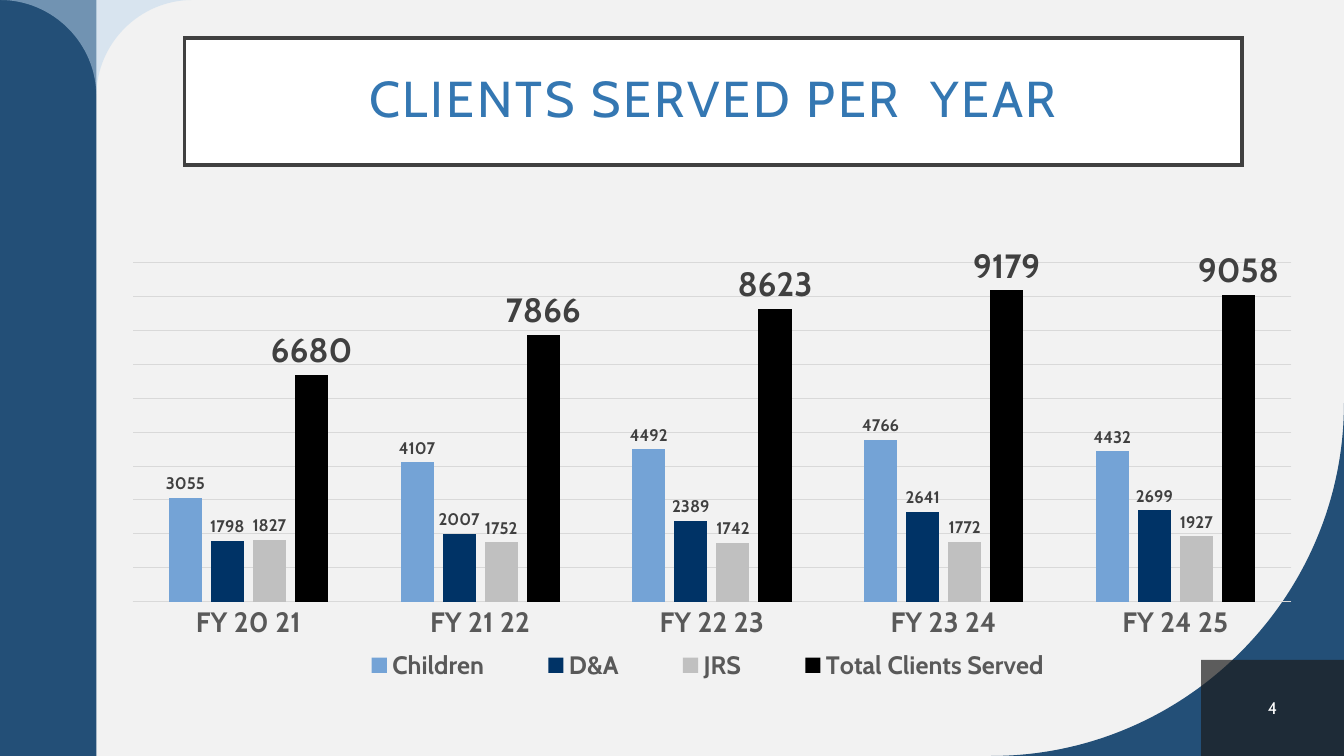
import dataclasses

import lxml.etree
import pptx
import pptx.chart.data
import pptx.dml.color
import pptx.enum.chart
import pptx.enum.shapes
import pptx.enum.text
import pptx.oxml.ns
import pptx.util


@dataclasses.dataclass(frozen=True)
class Theme:
    font: str = "Cabin"
    background: str = "F2F2F2"
    navy: str = "234F77"
    pale_blue: str = "C0D8ED"
    white: str = "FFFFFF"
    frame: str = "404040"
    title: str = "3477B2"
    badge: str = "1D1D1D"
    axis_text: str = "595959"
    grid_line: str = "D9D9D9"
    title_size: int = 36
    total_size: int = 24
    category_size: int = 20
    legend_size: int = 18
    small_size: int = 12


theme = Theme()
qn = pptx.oxml.ns.qn


def paint(shape, color, opacity=100):
    """Give a shape a flat fill, without outline or shadow."""
    shape.shadow.inherit = False
    shape.line.fill.background()
    shape.fill.solid()
    shape.fill.fore_color.rgb = pptx.dml.color.RGBColor.from_string(color)
    if opacity < 100:
        color_node = shape._element.spPr.find(qn("a:solidFill"))[0]
        lxml.etree.SubElement(color_node, qn("a:alpha")).set("val", str(opacity * 1000))


def set_font(font, size, color, bold=False):
    font.name = theme.font
    font.size = pptx.util.Pt(size)
    font.bold = bold
    font.color.rgb = pptx.dml.color.RGBColor.from_string(color)


deck = pptx.Presentation()
deck.slide_width = pptx.util.Emu(12192000)
deck.slide_height = pptx.util.Emu(6858000)
width, height = deck.slide_width, deck.slide_height
page = deck.slides.add_slide(deck.slide_layouts[5])
page.background.fill.solid()
page.background.fill.fore_color.rgb = pptx.dml.color.RGBColor.from_string(theme.background)

# Frames as percentages of the slide: left, top, width, height
shares = {
    "sidebar": (0, 0, 7.17, 100),
    "title": (13.73, 5, 78.7, 16.8),
    "badge": (89.37, 87.27, 10.63, 12.73),
    "chart": (7.8, 25, 89.72, 66.67),
}
frames = {
    name: [pptx.util.Emu(round(share * side / 100))
           for share, side in zip(frame, (width, height, width, height))]
    for name, frame in shares.items()
}

sidebar = page.shapes.add_shape(pptx.enum.shapes.MSO_SHAPE.RECTANGLE, *frames["sidebar"])
paint(sidebar, theme.navy)

# Quarter circles: each has a start, two control points and an end
big = height * 7 / 15
small = frames["sidebar"][2]
bend = 0.55
curves = [
    (theme.navy, 100, 1,
     [(width - big, height), (width - big + bend * big, height),
      (width, height - big + bend * big), (width, height - big), (width, height)]),
    (theme.pale_blue, 50, 2,
     [(2 * small, 0), (2 * small - bend * small, 0), (small, small - bend * small),
      (small, small), (small, small - bend * small), (bend * small, 0), (0, 0)]),
]
for color, opacity, arc_count, points in curves:
    points = [(round(x), round(y)) for x, y in points]
    outline = page.shapes.build_freeform(*points[0])
    outline.add_line_segments(points[1:], close=True)
    curve = outline.convert_to_shape()
    paint(curve, color, opacity)
    segments = list(curve._element.iter(qn("a:lnTo")))
    for first in range(0, 3 * arc_count, 3):
        bezier = lxml.etree.Element(qn("a:cubicBezTo"))
        segments[first].addprevious(bezier)
        for segment in segments[first:first + 3]:
            bezier.append(segment[0])
            segment.getparent().remove(segment)

# Title
title = page.shapes.title
page.shapes._spTree.append(title._element)
title.left, title.top, title.width, title.height = frames["title"]
title.fill.solid()
title.fill.fore_color.rgb = pptx.dml.color.RGBColor.from_string(theme.white)
title.line.color.rgb = pptx.dml.color.RGBColor.from_string(theme.frame)
title.line.width = pptx.util.Pt(2.5)
title_line = title._element.spPr.find(qn("a:ln"))
lxml.etree.SubElement(title_line, qn("a:miter")).set("lim", "800000")

# Page number
badge = page.shapes.add_shape(pptx.enum.shapes.MSO_SHAPE.RECTANGLE, *frames["badge"])
paint(badge, theme.badge, 70)

for box, text, size, color in (
    (title, "CLIENTS SERVED PER  YEAR", theme.title_size, theme.title),
    (badge, "4", theme.small_size, theme.white),
):
    box.text_frame.word_wrap = True
    box.text_frame.auto_size = pptx.enum.text.MSO_AUTO_SIZE.NONE
    box.text_frame.vertical_anchor = pptx.enum.text.MSO_ANCHOR.MIDDLE
    para = box.text_frame.paragraphs[0]
    para.alignment = pptx.enum.text.PP_ALIGN.CENTER
    span = para.add_run()
    span.text = text
    set_font(span.font, size, color)

title_para = title.text_frame.paragraphs[0]
title_para.line_spacing = 0.9
title_para.runs[0].font._element.set("spc", "200")
for side in ("left", "top", "right", "bottom"):
    setattr(title.text_frame, f"margin_{side}", pptx.util.Inches(0.2))

# Chart
series_rows = [
    ("Children", (3055, 4107, 4492, 4766, 4432), "74A3D6", theme.small_size),
    ("D&A", (1798, 2007, 2389, 2641, 2699), "003366", theme.small_size),
    ("JRS", (1827, 1752, 1742, 1772, 1927), "C0C0C0", theme.small_size),
    ("Total Clients Served", (6680, 7866, 8623, 9179, 9058), "000000", theme.total_size),
]
data = pptx.chart.data.CategoryChartData()
data.categories = [f"FY {year} {year + 1}" for year in range(20, 25)]
for name, values, color, label_size in series_rows:
    data.add_series(name, values)
chart = page.shapes.add_chart(
    pptx.enum.chart.XL_CHART_TYPE.COLUMN_CLUSTERED, *frames["chart"], data).chart
set_font(chart.font, 10, "000000")
chart.has_title = False
chart.has_legend = True
chart.legend.position = pptx.enum.chart.XL_LEGEND_POSITION.BOTTOM
chart.legend.include_in_layout = False
set_font(chart.legend.font, theme.legend_size, theme.axis_text, True)

plot = chart.plots[0]
plot.vary_by_categories = False
plot.gap_width = 219
plot.overlap = -27
for series, (name, values, color, label_size) in zip(plot.series, series_rows):
    series.format.fill.solid()
    series.format.fill.fore_color.rgb = pptx.dml.color.RGBColor.from_string(color)
    labels = series.data_labels
    labels.show_value = True
    labels.position = pptx.enum.chart.XL_LABEL_POSITION.OUTSIDE_END
    set_font(labels.font, label_size, theme.frame, True)

category_axis, value_axis = chart.category_axis, chart.value_axis
category_axis.major_tick_mark = pptx.enum.chart.XL_TICK_MARK.NONE
set_font(category_axis.tick_labels.font, theme.category_size, theme.axis_text, True)
value_axis.visible = False
value_axis.minimum_scale = 0
value_axis.maximum_scale = 10000
value_axis.major_unit = 1000
value_axis.has_major_gridlines = True
for line in (category_axis.format.line, value_axis.major_gridlines.format.line):
    line.color.rgb = pptx.dml.color.RGBColor.from_string(theme.grid_line)
    line.width = pptx.util.Pt(0.75)

# Fixed plot area and legend, as shares of the chart
plot_area = chart._chartSpace.chart.plotArea
legend = chart.legend._element
for part, index, target, frame in (
    (plot_area, 0, [("layoutTarget", "inner")], (0.023, 0.146, 0.961, 0.673)),
    (legend, 1, [], (0.175, 0.9, 0.65, 0.09)),
):
    for old_layout in part.findall(qn("c:layout")):
        part.remove(old_layout)
    layout = lxml.etree.Element(qn("c:layout"))
    part.insert(index, layout)
    manual = lxml.etree.SubElement(layout, qn("c:manualLayout"))
    modes = [("xMode", "edge"), ("yMode", "edge")]
    for tag, value in target + modes + list(zip("xywh", frame)):
        lxml.etree.SubElement(manual, qn(f"c:{tag}")).set("val", str(value))

deck.save("out.pptx")
